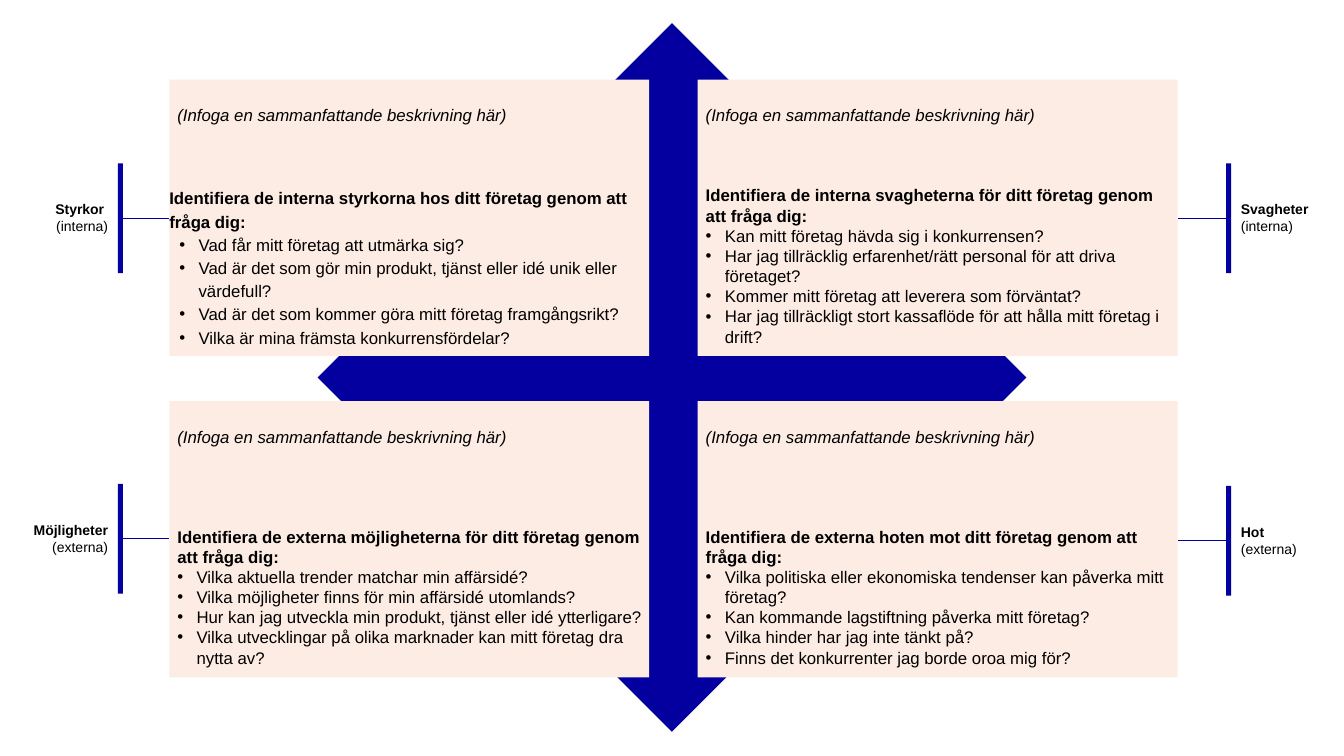
from lxml import etree
from pptx import Presentation
from pptx.dml.color import RGBColor
from pptx.enum.shapes import MSO_CONNECTOR, MSO_SHAPE
from pptx.enum.text import MSO_ANCHOR, PP_ALIGN
from pptx.oxml.ns import qn
from pptx.util import Inches, Pt

DIAMOND, RECTANGLE = MSO_SHAPE.DIAMOND, MSO_SHAPE.RECTANGLE
STRAIGHT = MSO_CONNECTOR.STRAIGHT
TOP = MSO_ANCHOR.TOP
LEFT, RIGHT = PP_ALIGN.LEFT, PP_ALIGN.RIGHT

NAVY = RGBColor(0x03, 0x00, 0x9F)
PEACH = RGBColor(0xFD, 0xEC, 0xE3)
BLACK = RGBColor(0x00, 0x00, 0x00)

FONT = "Arial"
PROMPT = "(Infoga en sammanfattande beskrivning här)"
PANEL_WIDTH, PANEL_HEIGHT = 4.76, 2.74
LEFT_COLUMN, RIGHT_COLUMN = 1.68, 6.92
TOP_ROW, BOTTOM_ROW = 0.79, 3.98
BAR_WIDTH, BAR_HEIGHT = 0.05, 1.09
LABEL_HEIGHT = 0.44

QUADRANTS = [
    {
        "left": LEFT_COLUMN, "top": TOP_ROW, "bar_top": 1.62,
        "label": ("Styrkor ", "(interna)"),
        "heading": "Identifiera de interna styrkorna hos ditt företag genom att fråga dig:",
        "questions": [
            "Vad får mitt företag att utmärka sig?",
            "Vad är det som gör min produkt, tjänst eller idé unik eller värdefull?",
            "Vad är det som kommer göra mitt företag framgångsrikt?",
            "Vilka är mina främsta konkurrensfördelar?",
        ],
        "heading_gap": 43, "heading_indent": 0, "bullet_indent": 0.29, "line_spacing": 1.15,
    },
    {
        "left": RIGHT_COLUMN, "top": TOP_ROW, "bar_top": 1.62,
        "label": ("Svagheter", "(interna)"),
        "heading": "Identifiera de interna svagheterna för ditt företag genom att fråga dig:",
        "questions": [
            "Kan mitt företag hävda sig i konkurrensen?",
            "Har jag tillräcklig erfarenhet/rätt personal för att driva företaget?",
            "Kommer mitt företag att leverera som förväntat?",
            "Har jag tillräckligt stort kassaflöde för att hålla mitt företag i drift?",
        ],
        "heading_gap": 43, "heading_indent": 0.08, "bullet_indent": 0.27, "line_spacing": 1.0,
    },
    {
        "left": LEFT_COLUMN, "top": BOTTOM_ROW, "bar_top": 4.8,
        "label": ("Möjligheter", "(externa)"),
        "heading": "Identifiera de externa möjligheterna för ditt företag genom att fråga dig:",
        "questions": [
            "Vilka aktuella trender matchar min affärsidé?",
            "Vilka möjligheter finns för min affärsidé utomlands?",
            "Hur kan jag utveckla min produkt, tjänst eller idé ytterligare?",
            "Vilka utvecklingar på olika marknader kan mitt företag dra nytta av?",
        ],
        "heading_gap": 57, "heading_indent": 0.08, "bullet_indent": 0.27, "line_spacing": 1.0,
    },
    {
        "left": RIGHT_COLUMN, "top": BOTTOM_ROW, "bar_top": 4.82,
        "label": ("Hot", "(externa)"),
        "heading": "Identifiera de externa hoten mot ditt företag genom att fråga dig:",
        "questions": [
            "Vilka politiska eller ekonomiska tendenser kan påverka mitt företag?",
            "Kan kommande lagstiftning påverka mitt företag?",
            "Vilka hinder har jag inte tänkt på?",
            "Finns det konkurrenter jag borde oroa mig för?",
        ],
        "heading_gap": 57, "heading_indent": 0.08, "bullet_indent": 0.27, "line_spacing": 1.0,
    },
]


def add_filled_shape(slide, kind, left, top, width, height, color):
    """Add a flat preset shape without outline or shadow."""
    shape = slide.shapes.add_shape(
        kind, Inches(left), Inches(top), Inches(width), Inches(height)
    )
    shape.shadow.inherit = False
    shape.fill.solid()
    shape.fill.fore_color.rgb = color
    shape.line.fill.background()
    return shape


def write_paragraph(paragraph, text, size, bold=False, italic=False, alignment=LEFT):
    """Fill a paragraph and format its runs."""
    paragraph.text = text
    paragraph.alignment = alignment
    for run in paragraph.runs:
        run.font.name = FONT
        run.font.size = Pt(size)
        run.font.bold = bold
        run.font.italic = italic
        run.font.color.rgb = BLACK


def indent_paragraph(paragraph, margin, hanging=0, bullet=None):
    """Set the left margin, the hanging indent and an optional bullet."""
    properties = paragraph._p.get_or_add_pPr()
    properties.set("marL", str(Inches(margin)))
    properties.set("indent", str(-Inches(hanging)))
    if bullet:
        font = etree.SubElement(properties, qn("a:buFont"))
        font.set("typeface", FONT)
        etree.SubElement(properties, qn("a:buChar")).set("char", bullet)


def add_panel(slide, left, top, quadrant):
    """Add one quadrant with its prompt, heading and questions."""
    panel = add_filled_shape(
        slide, RECTANGLE, left, top, PANEL_WIDTH, PANEL_HEIGHT, PEACH
    )
    frame = panel.text_frame
    frame.word_wrap = True
    frame.vertical_anchor = TOP
    frame.margin_left = frame.margin_right = 0
    frame.margin_top, frame.margin_bottom = Inches(0.25), Inches(0.05)

    prompt = frame.paragraphs[0]
    write_paragraph(prompt, PROMPT, 12, italic=True)
    indent_paragraph(prompt, 0.08)

    heading = frame.add_paragraph()
    write_paragraph(heading, quadrant["heading"], 12, bold=True)
    heading.line_spacing = quadrant["line_spacing"]
    heading.space_before = Pt(quadrant["heading_gap"])
    indent_paragraph(heading, quadrant["heading_indent"])

    for question in quadrant["questions"]:
        paragraph = frame.add_paragraph()
        write_paragraph(paragraph, question, 12)
        paragraph.line_spacing = quadrant["line_spacing"]
        indent_paragraph(paragraph, quadrant["bullet_indent"], 0.19, "•")


def add_side_label(slide, panel_left, bar_top, lines):
    """Add the connector, bar and label on the outer side of a panel."""
    if panel_left == LEFT_COLUMN:
        panel_edge, bar_left, bar_edge = panel_left, 1.17, 1.17 + BAR_WIDTH
        label_left, label_width, alignment = 0, 1.17, RIGHT
    else:
        panel_edge, bar_left, bar_edge = panel_left + PANEL_WIDTH, 12.16, 12.16
        label_left, label_width, alignment = 12.16 + BAR_WIDTH, 1.1, LEFT

    middle = Inches(bar_top + BAR_HEIGHT / 2)
    connector = slide.shapes.add_connector(
        STRAIGHT, Inches(bar_edge), middle, Inches(panel_edge), middle
    )
    connector.line.color.rgb = NAVY
    connector.line.width = Pt(1)
    etree.SubElement(connector._element.spPr, qn("a:effectLst"))

    label = slide.shapes.add_textbox(
        Inches(label_left), Inches(bar_top + (BAR_HEIGHT - LABEL_HEIGHT) / 2),
        Inches(label_width), Inches(LABEL_HEIGHT),
    )
    frame = label.text_frame
    frame.word_wrap = True
    name, scope = lines
    write_paragraph(frame.paragraphs[0], name, 10, bold=True, alignment=alignment)
    write_paragraph(frame.add_paragraph(), scope, 10, alignment=alignment)

    add_filled_shape(slide, RECTANGLE, bar_left, bar_top, BAR_WIDTH, BAR_HEIGHT, NAVY)


def build_swot_slide(presentation):
    """Add the slide with the diamond, four quadrants and side labels."""
    slide = presentation.slides.add_slide(presentation.slide_layouts[6])
    add_filled_shape(slide, DIAMOND, 3.15, 0.23, 7.03, 7.03, NAVY)
    for quadrant in QUADRANTS:
        add_panel(slide, quadrant["left"], quadrant["top"], quadrant)
        add_side_label(slide, quadrant["left"], quadrant["bar_top"], quadrant["label"])


def main():
    """Build and save the presentation."""
    presentation = Presentation()
    presentation.slide_width = Inches(13.33)
    presentation.slide_height = Inches(7.5)
    build_swot_slide(presentation)
    presentation.save("out.pptx")


if __name__ == "__main__":
    main()
